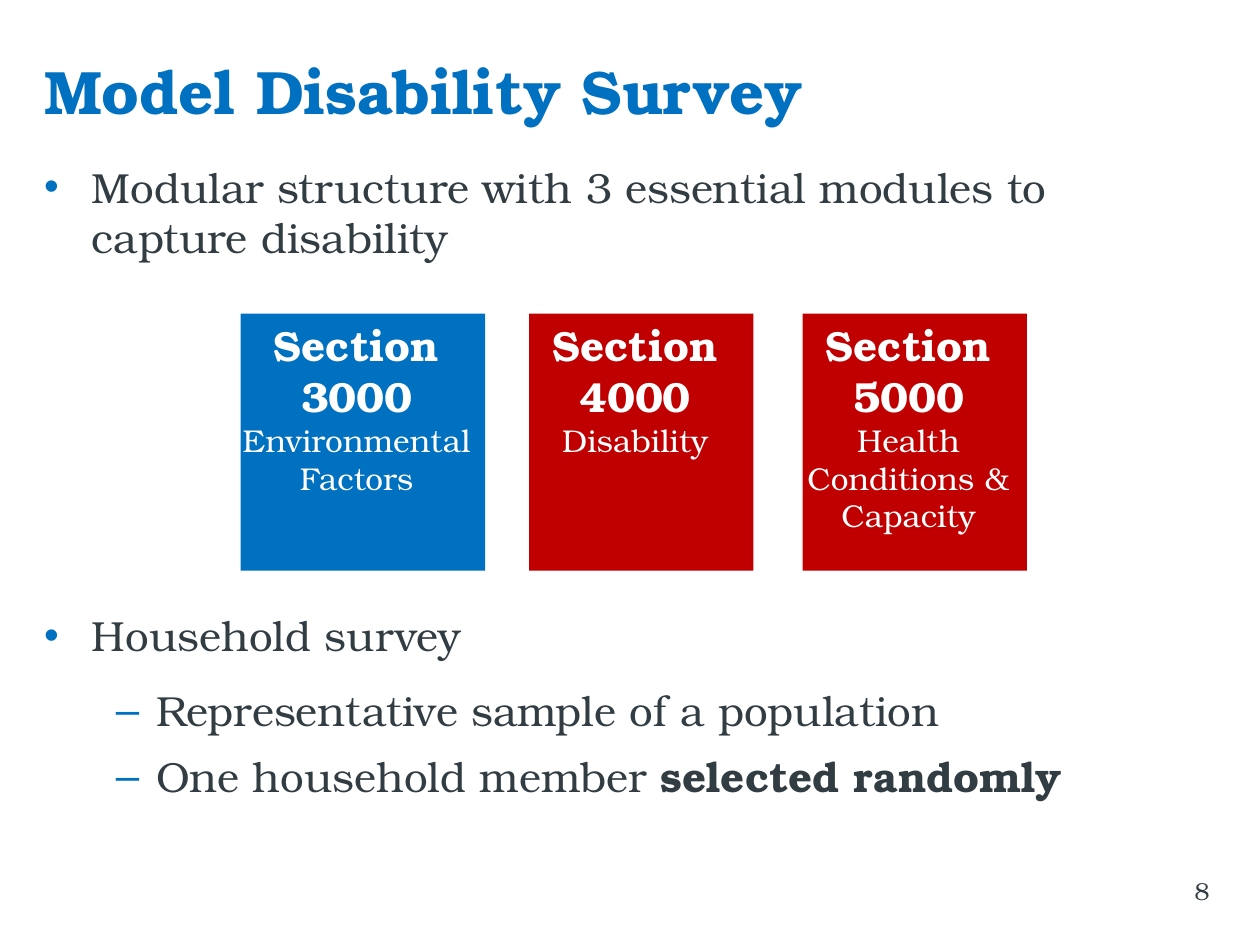
from dataclasses import dataclass

from lxml.etree import SubElement
from pptx import Presentation
from pptx.dml.color import RGBColor
from pptx.enum.shapes import MSO_SHAPE as Preset
from pptx.enum.text import MSO_ANCHOR as Anchor, PP_ALIGN as Align
from pptx.oxml.ns import qn
from pptx.util import Inches, Pt


@dataclass(frozen=True)
class Theme:
    font: str = "TeX Gyre Bonum"
    blue: str = "0070C0"
    red: str = "C00000"
    ink: str = "323D43"
    white: str = "FFFFFF"
    title: int = 35
    body: int = 24
    label: int = 18
    small: int = 14


THEME = Theme()
LEFT, CONTENT_WIDTH = 0.35, 9.29
MODULE_TOP, MODULE_HEIGHT = 2.49, 2.04

# left, width, fill, heading, label
MODULES = [
    (1.91, 1.94, THEME.blue, "Section 3000", "Environmental Factors"),
    (4.2, 1.78, THEME.red, "Section 4000", "Disability"),
    (6.37, 1.78, THEME.red, "Section 5000", "Health Conditions & Capacity"),
]

# Bullet character, left margin, hanging indent and spacing for each level
LEVELS = [
    dict(mark="•", margin=0.38, hang=0.38, format=dict(space_after=Pt(17))),
    dict(mark="–", margin=0.89, hang=0.32,
         format=dict(space_after=Pt(12), line_spacing=0.9)),
]


def set_values(target, values):
    for name, value in values.items():
        setattr(target, name, value)


def prepare_frame(shape, right=0.1, anchor=Anchor.TOP):
    frame = shape.text_frame
    set_values(frame, dict(
        word_wrap=True, vertical_anchor=anchor,
        margin_left=0, margin_right=Inches(right),
        margin_top=Inches(0.05), margin_bottom=Inches(0.05)))
    return frame


def add_run(paragraph, text, size, color, bold=False):
    run = paragraph.add_run()
    run.text = text
    set_values(run.font, dict(name=THEME.font, size=Pt(size), bold=bold))
    run.font.color.rgb = RGBColor.from_string(color)


def next_paragraph(frame, index):
    return frame.add_paragraph() if index else frame.paragraphs[0]


def add_line(slide, box, text, size, color, bold=False, align=Align.LEFT, **frame_options):
    shape = slide.shapes.add_textbox(*map(Inches, box))
    paragraph = prepare_frame(shape, **frame_options).paragraphs[0]
    paragraph.alignment = align
    add_run(paragraph, text, size, color, bold)


def set_bullet(paragraph, level):
    set_values(paragraph, level["format"])
    properties = paragraph._p.get_or_add_pPr()
    properties.set("marL", str(Inches(level["margin"])))
    properties.set("indent", str(-Inches(level["hang"])))
    color = SubElement(properties, qn("a:buClr"))
    SubElement(color, qn("a:srgbClr"), val=THEME.blue)
    SubElement(properties, qn("a:buFont"), typeface="Arial")
    SubElement(properties, qn("a:buChar"), char=level["mark"])


def add_bullets(slide, top, height, items):
    shape = slide.shapes.add_textbox(*map(Inches, (LEFT, top, CONTENT_WIDTH, height)))
    frame = prepare_frame(shape)
    for index, (level, plain, strong) in enumerate(items):
        paragraph = next_paragraph(frame, index)
        paragraph.level = level
        set_bullet(paragraph, LEVELS[level])
        add_run(paragraph, plain, THEME.body, THEME.ink)
        if strong:
            add_run(paragraph, strong, THEME.body, THEME.ink, bold=True)


def add_module(slide, left, width, fill, heading, label):
    box = map(Inches, (left, MODULE_TOP, width, MODULE_HEIGHT))
    shape = slide.shapes.add_shape(Preset.RECTANGLE, *box)
    shape.shadow.inherit = False
    shape.fill.solid()
    shape.fill.fore_color.rgb = RGBColor.from_string(fill)
    shape.line.fill.background()
    frame = prepare_frame(shape)
    lines = [(heading, THEME.body, True), (label, THEME.label, False)]
    for index, (text, size, bold) in enumerate(lines):
        paragraph = next_paragraph(frame, index)
        paragraph.alignment = Align.CENTER
        add_run(paragraph, text, size, THEME.white, bold)


def main():
    presentation = Presentation()
    presentation.slide_width, presentation.slide_height = Inches(10), Inches(7.5)
    slide = presentation.slides.add_slide(presentation.slide_layouts[6])

    # Title
    add_line(slide, (LEFT, 0.36, CONTENT_WIDTH, 0.71), "Model Disability Survey",
             THEME.title, THEME.blue, bold=True, anchor=Anchor.MIDDLE)

    # Structure, with its three modules
    add_bullets(slide, 1.23, 1.1, [
        (0, "Modular structure with 3 essential modules to capture disability", "")])
    for module in MODULES:
        add_module(slide, *module)

    # Sampling
    add_bullets(slide, 4.79, 1.9, [
        (0, "Household survey", ""),
        (1, "Representative sample of a population", ""),
        (1, "One household member ", "selected randomly")])

    # Slide number
    add_line(slide, (7.52, 6.9, 2.08, 0.5), "8", THEME.small, THEME.ink,
             align=Align.RIGHT, right=0)

    presentation.save("out.pptx")


if __name__ == "__main__":
    main()
